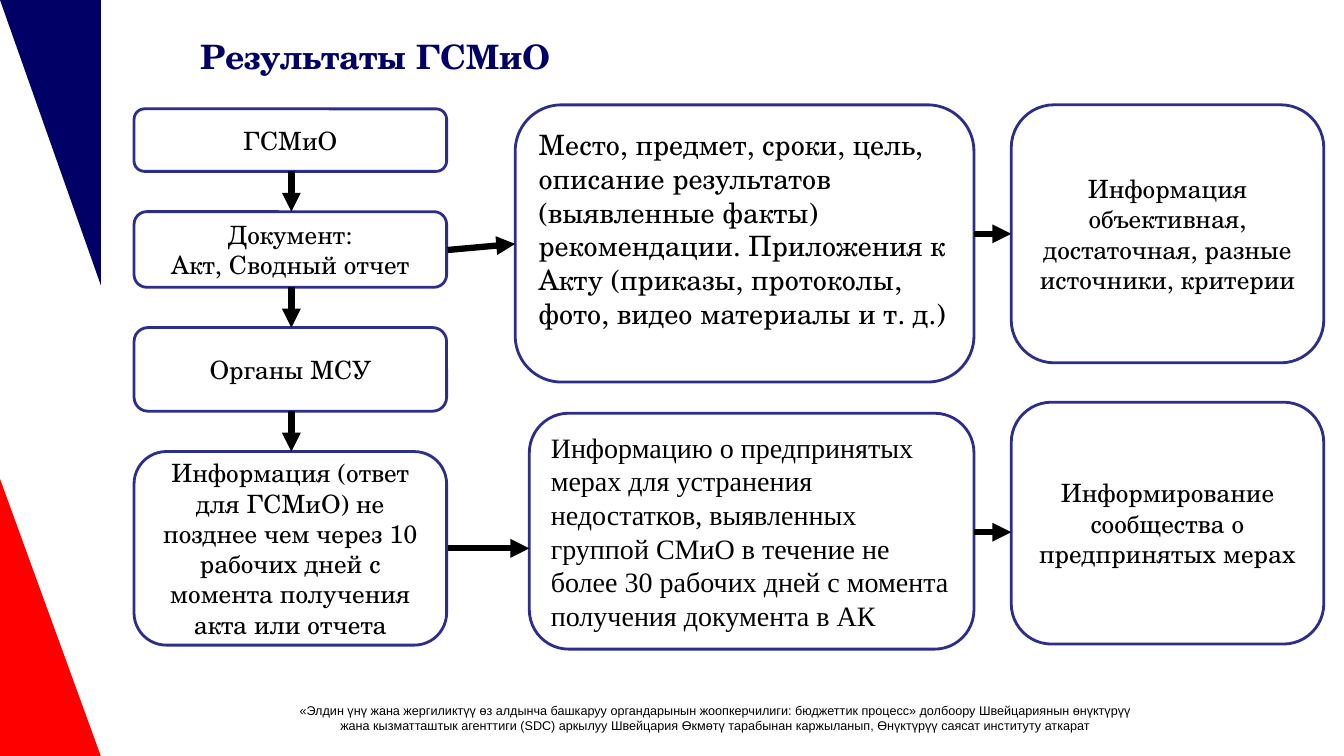
"""Build the slide on the results of ГСМиО as a flow of documents and outcomes."""
from pptx import Presentation
from pptx.dml.color import RGBColor
from pptx.enum import shapes, text
from pptx.oxml import xmlchemy
from pptx.util import Inches, Pt

COLORS = {"navy": "000066", "red": "FF0000", "outline": "2D2D8A", "white": "FFFFFF", "black": "000000"}
SCHOLA = "TeX Gyre Schola"


def write(frame, wording, size=18, font=SCHOLA, color="black", bold=False, align=text.PP_ALIGN.CENTER):
    frame.word_wrap = True
    frame.auto_size = text.MSO_AUTO_SIZE.NONE
    frame.vertical_anchor = text.MSO_ANCHOR.MIDDLE
    frame.text = wording
    for paragraph in frame.paragraphs:
        paragraph.alignment = align
        paragraph.font.size = Pt(size)
        paragraph.font.name = font
        paragraph.font.bold = bold
        paragraph.font.color.rgb = RGBColor.from_string(COLORS[color])


def add_figure(preset, place, fill, outline=None):
    figure = slide.shapes.add_shape(preset, *map(Inches, place))
    figure.shadow.inherit = False
    figure.fill.solid()
    figure.fill.fore_color.rgb = RGBColor.from_string(COLORS[fill])
    if outline:
        figure.line.color.rgb = RGBColor.from_string(COLORS[outline])
        figure.line.width = Pt(2)
    else:
        figure.line.fill.background()
    return figure


deck = Presentation()
deck.slide_width, deck.slide_height = Inches(13.33), Inches(7.5)
slide = deck.slides.add_slide(deck.slide_layouts[5])

heading = slide.shapes.title
heading.left, heading.top, heading.width, heading.height = map(Inches, (1.89, 0.25, 11, 0.62))
write(heading.text_frame, "Результаты ГСМиО", size=24, color="navy", bold=True, align=text.PP_ALIGN.LEFT)

add_figure(shapes.MSO_SHAPE.RIGHT_TRIANGLE, (0, 4.75, 1, 2.75), "red")
top_corner = add_figure(shapes.MSO_SHAPE.RIGHT_TRIANGLE, (0, 0, 1, 2.83), "navy")
top_corner.rotation = 180

funding_note = slide.shapes.add_textbox(*map(Inches, (1.21, 6.87, 11.76, 0.5)))
write(
    funding_note.text_frame,
    "«Элдин үнү жана жергиликтүү өз алдынча башкаруу органдарынын жоопкерчилиги: "
    "бюджеттик процесс» долбоору Швейцариянын ѳнүктүрүү\n"
    "жана кызматташтык агенттиги (SDC) аркылуу Швейцария Өкмөтү тарабынан каржыланып, "
    "Өнүктүрүү саясат институту аткарат",
    size=9, font="Arial",
)

STEP_LEFT, OUTCOME_LEFT, SIDE_WIDTH = 1.33, 10.03, 3.1
detail = {"size": 20, "align": text.PP_ALIGN.LEFT}
stages = [
    ((STEP_LEFT, 1.08, SIDE_WIDTH, 0.62), "ГСМиО", {}),
    ((STEP_LEFT, 2.1, SIDE_WIDTH, 0.75), "Документ:\nАкт, Сводный отчет", {}),
    ((STEP_LEFT, 3.25, SIDE_WIDTH, 0.83), "Органы МСУ", {}),
    ((STEP_LEFT, 4.48, SIDE_WIDTH, 1.92),
     "Информация (ответ для ГСМиО) не позднее чем через 10 рабочих дней "
     "с момента получения акта или отчета", {}),
    ((5.25, 4.1, 4.41, 2.34),
     "Информацию о предпринятых мерах для устранения недостатков, выявленных группой СМиО "
     "в течение не более 30 рабочих дней с момента получения документа в АК",
     {**detail, "font": "Times New Roman"}),
    ((OUTCOME_LEFT, 1.04, SIDE_WIDTH, 2.56),
     "Информация объективная, достаточная, разные источники, критерии", {}),
    ((OUTCOME_LEFT, 3.99, SIDE_WIDTH, 2.4), "Информирование сообщества о предпринятых мерах", {}),
    ((5.11, 1.04, 4.55, 2.75),
     "Место, предмет, сроки, цель, описание результатов (выявленные факты) рекомендации. "
     "Приложения к Акту (приказы, протоколы, фото, видео материалы и т. д.)", detail),
]
for place, wording, style in stages:
    stage = add_figure(shapes.MSO_SHAPE.ROUNDED_RECTANGLE, place, "white", "outline")
    write(stage.text_frame, wording, **style)
act_contents = stage
act_contents.text_frame.margin_bottom = Inches(0.34)

STEP_CENTER = 2.89
arrows = [
    (STEP_CENTER, 1.7, STEP_CENTER, 2.1),
    (STEP_CENTER, 2.85, STEP_CENTER, 3.25),
    (STEP_CENTER, 4.08, STEP_CENTER, 4.48),
    (4.44, 2.48, 5.11, 2.42),
    (4.44, 5.44, 5.25, 5.44),
    (9.66, 2.32, OUTCOME_LEFT, 2.32),
    (9.66, 5.28, OUTCOME_LEFT, 5.28),
]
for ends in arrows:
    arrow = slide.shapes.add_connector(shapes.MSO_CONNECTOR.STRAIGHT, *map(Inches, ends))
    arrow.line.color.rgb = RGBColor.from_string(COLORS["black"])
    arrow.line.width = Pt(4.5)
    head = xmlchemy.OxmlElement("a:tailEnd")
    head.set("type", "triangle")
    arrow.line._get_or_add_ln().append(head)
    arrow._element.spPr.append(xmlchemy.OxmlElement("a:effectLst"))

deck.save("out.pptx")
